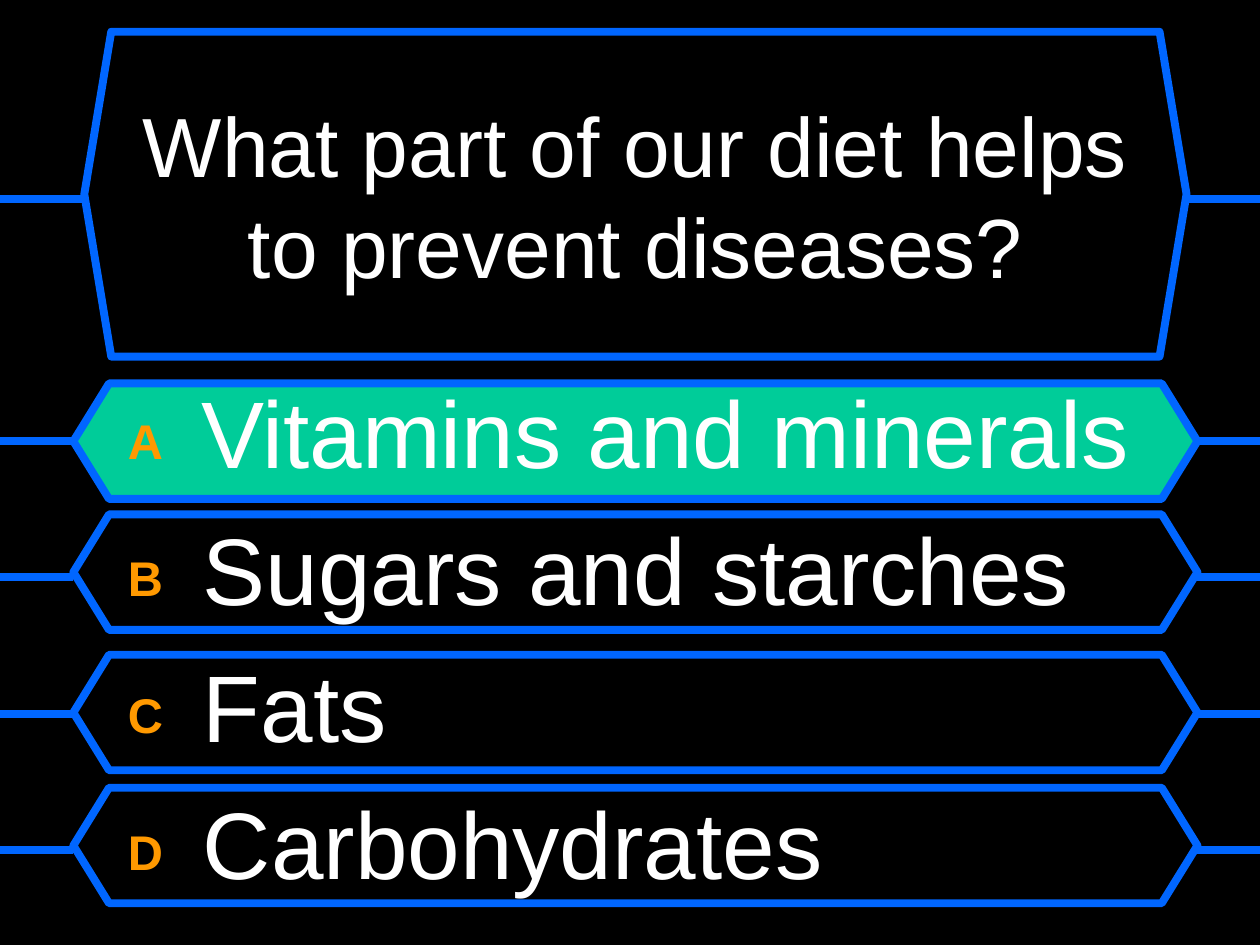
from pptx import Presentation
from pptx.dml.color import RGBColor as Rgb
from pptx.enum.shapes import MSO_CONNECTOR as Connector, MSO_SHAPE as Preset
from pptx.enum.text import MSO_ANCHOR as Anchor, PP_ALIGN as Align
from pptx.oxml.ns import qn
from pptx.util import Cm, Pt
from lxml.etree import SubElement

QUESTION = "What part of our diet helps to prevent diseases?"
ANSWERS = [
    ("A", "Vitamins and minerals", 7.73),
    ("B", "Sugars and starches", 10.37),
    ("C", "Fats", 13.2),
    ("D", "Carbohydrates", 15.88),
]
CORRECT = "A"

THEME = {
    "font": "Arial",
    "back": Rgb.from_string("000000"),
    "frame": Rgb.from_string("0066FF"),
    "correct": Rgb.from_string("00CC99"),
    "text": Rgb.from_string("FFFFFF"),
    "letter": Rgb.from_string("FF9900"),
    "question_size": 48,
    "letter_size": 48,
    "answer_size": 54,
    "answer_gap": 13.5,
    "frame_width": 4.5,
}

SLIDE_WIDTH, SLIDE_HEIGHT = 25.4, 19.05
QUESTION_FRAME = (1.7, 0.64, 22.22, 6.55)
QUESTION_TEXT = (2.12, 1.06, 21.38, 5.72)
ANSWER_LEFT, ANSWER_WIDTH, ANSWER_HEIGHT = 1.48, 22.66, 2.33
ANSWERS_TEXT = (2.33, 7.41, 21.17, 11.01)
QUESTION_WIRE = 4.02
FIRST_WIRE, WIRE_STEP = 8.89, 2.75
HANGING = 0.95


def style_line(line):
    """Give a line the colour and width of the frames."""
    line.color.rgb = THEME["frame"]
    line.width = Pt(THEME["frame_width"])


def add_frame(slide, box, slant, fill):
    """Draw one hexagonal frame."""
    frame = slide.shapes.add_shape(Preset.HEXAGON, *map(Cm, box))
    frame.adjustments[0] = slant
    frame.shadow.inherit = False
    frame.fill.solid()
    frame.fill.fore_color.rgb = fill
    style_line(frame.line)


def add_wires(slide, left, width, y):
    """Join both tips of a frame to the slide edges."""
    for start, end in ((left, 0), (SLIDE_WIDTH, left + width)):
        wire = slide.shapes.add_connector(
            Connector.STRAIGHT, Cm(start), Cm(y), Cm(end), Cm(y))
        style_line(wire.line)
        SubElement(wire._element.spPr, qn("a:effectLst"))


def add_text_area(slide, box, anchor):
    """Add a wrapping text box and return its text frame."""
    area = slide.shapes.add_textbox(*map(Cm, box)).text_frame
    area.word_wrap = True
    area.vertical_anchor = anchor
    return area


def add_run(paragraph, text, *, size, color, bold=False, baseline=0):
    """Append formatted text to a paragraph."""
    run = paragraph.add_run()
    run.text = text
    run.font.name = THEME["font"]
    run.font.size = Pt(size)
    run.font.color.rgb = color
    run.font.bold = bold
    if baseline:
        run.font._element.set("baseline", str(baseline * 1000))


def add_question(slide):
    """Add the question with its frame and wires."""
    add_frame(slide, QUESTION_FRAME, 0.083, THEME["back"])
    add_wires(slide, QUESTION_FRAME[0], QUESTION_FRAME[2], QUESTION_WIRE)
    question = add_text_area(slide, QUESTION_TEXT, Anchor.MIDDLE).paragraphs[0]
    question.alignment = Align.CENTER
    add_run(question, QUESTION, size=THEME["question_size"], color=THEME["text"])


def add_answers(slide):
    """Add the lettered answers with their frames and wires."""
    for index, (letter, _, top) in enumerate(ANSWERS):
        fill = THEME["correct" if letter == CORRECT else "back"]
        add_frame(slide, (ANSWER_LEFT, top, ANSWER_WIDTH, ANSWER_HEIGHT), 0.309, fill)
        add_wires(slide, ANSWER_LEFT, ANSWER_WIDTH, FIRST_WIRE + index * WIRE_STEP)

    area = add_text_area(slide, ANSWERS_TEXT, Anchor.TOP)
    for index, (letter, answer, _) in enumerate(ANSWERS):
        paragraph = area.add_paragraph() if index else area.paragraphs[0]
        paragraph.space_before = Pt(THEME["answer_gap"])
        properties = paragraph._p.get_or_add_pPr()
        properties.set("marL", str(Cm(HANGING)))
        properties.set("indent", str(-Cm(HANGING)))
        add_run(paragraph, letter + " ", size=THEME["letter_size"],
                color=THEME["letter"], bold=True, baseline=10)
        add_run(paragraph, " " + answer, size=THEME["answer_size"], color=THEME["text"])


def main():
    """Build the quiz slide."""
    deck = Presentation()
    deck.slide_width, deck.slide_height = Cm(SLIDE_WIDTH), Cm(SLIDE_HEIGHT)
    slide = deck.slides.add_slide(deck.slide_layouts[6])
    slide.background.fill.solid()
    slide.background.fill.fore_color.rgb = THEME["back"]
    add_question(slide)
    add_answers(slide)
    deck.save("out.pptx")


if __name__ == "__main__":
    main()
